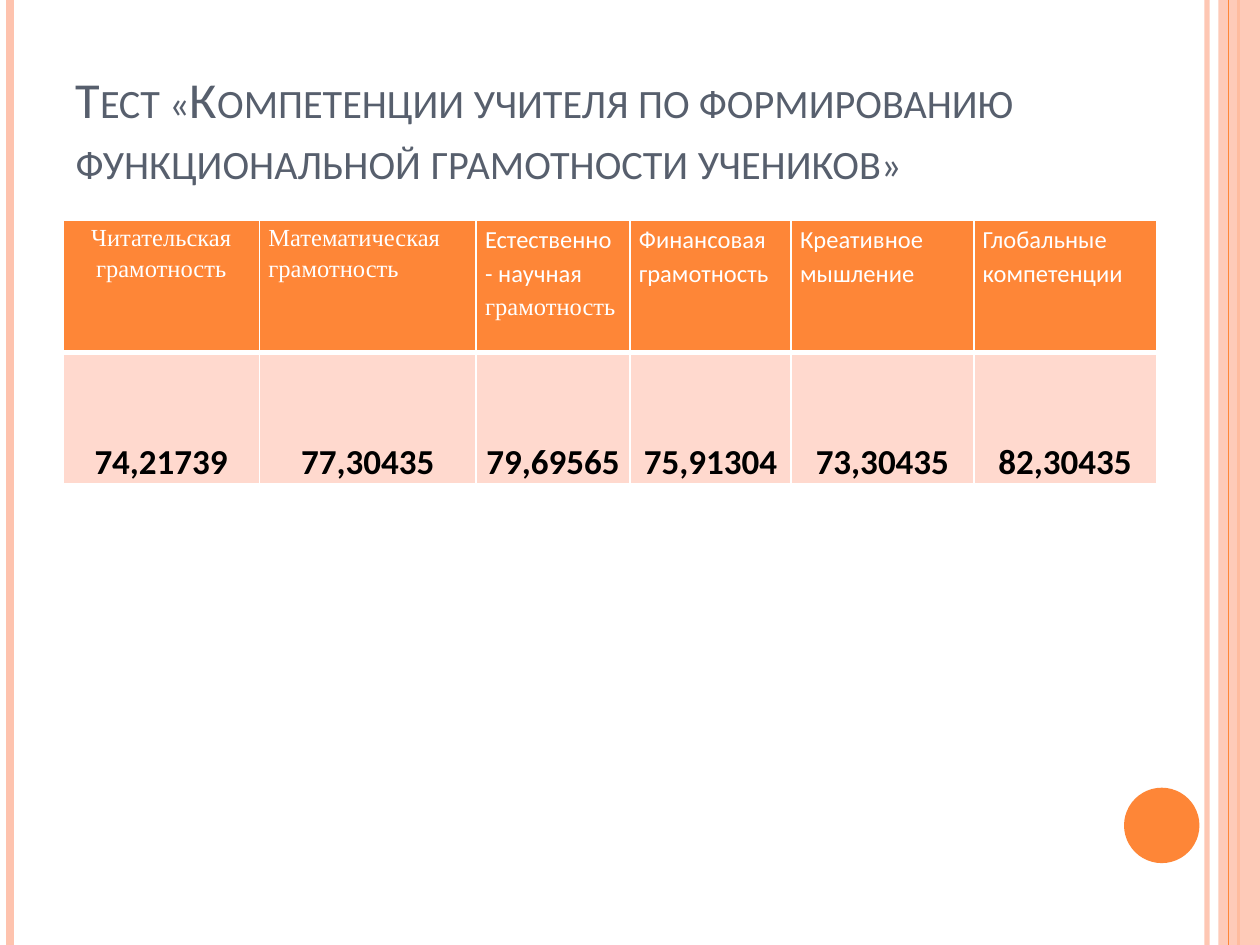
from dataclasses import dataclass

from lxml.etree import SubElement
from pptx import Presentation
from pptx.dml.color import RGBColor
from pptx.enum.shapes import MSO_CONNECTOR, MSO_SHAPE
from pptx.enum.text import MSO_ANCHOR, MSO_AUTO_SIZE, PP_ALIGN
from pptx.oxml.ns import qn
from pptx.util import Cm, Pt


@dataclass(frozen=True)
class Theme:
    """Colours, fonts and type sizes of the deck."""

    orange: str = "FE8637"
    peach: str = "FEC3AE"
    pale: str = "FFD9CE"
    slate: str = "575F6D"
    white: str = "FFFFFF"
    black: str = "000000"
    sans: str = "Calibri"
    serif: str = "Times New Roman"
    title_size: float = 28.8
    header_size: int = 14
    value_size: int = 20


class SlideBuilder:
    """Adds styled elements to the current slide."""

    def __init__(self, deck, theme):
        self.theme = theme
        self.height = deck.slide_height
        self.page = deck.slides.add_slide(deck.slide_layouts[5])

    def set_alpha(self, element, percent):
        """Make the solid colour inside an element partly transparent."""
        colour = next(element.iter(qn("a:srgbClr")))
        SubElement(colour, qn("a:alpha"), val=str(percent * 1000))

    def format_span(self, span, font, size, colour, bold=False):
        """Apply typeface, size, colour and weight to a run."""
        span.font.name = font
        span.font.size = Pt(size)
        span.font.bold = bold
        span.font.color.rgb = RGBColor.from_string(colour)

    def add_rule(self, x, colour, width, alpha=100):
        """Draw a vertical line over the full slide height."""
        rule = self.page.shapes.add_connector(
            MSO_CONNECTOR.STRAIGHT, Cm(x), 0, Cm(x), self.height)
        rule.line.color.rgb = RGBColor.from_string(colour)
        rule.line.width = Pt(width)
        properties = rule._element.spPr
        if alpha < 100:
            self.set_alpha(properties, alpha)
        SubElement(properties, qn("a:effectLst"))

    def add_block(self, kind, left, top, width, height, colour, alpha=100):
        """Draw a filled shape without an outline."""
        block = self.page.shapes.add_shape(
            kind, Cm(left), Cm(top), Cm(width), Cm(height))
        block.shadow.inherit = False
        block.fill.solid()
        block.fill.fore_color.rgb = RGBColor.from_string(colour)
        block.line.fill.background()
        if alpha < 100:
            self.set_alpha(block._element.spPr, alpha)

    def add_title(self, text, left, top, width, height):
        """Place the title in small capitals."""
        box = self.page.shapes.title
        box.left, box.top = Cm(left), Cm(top)
        box.width, box.height = Cm(width), Cm(height)
        frame = box.text_frame
        frame.text = text
        frame.word_wrap = True
        frame.auto_size = MSO_AUTO_SIZE.NONE
        frame.vertical_anchor = MSO_ANCHOR.BOTTOM
        para = frame.paragraphs[0]
        para.alignment = PP_ALIGN.LEFT
        span = para.runs[0]
        self.format_span(span, self.theme.sans, self.theme.title_size, self.theme.slate)
        span._r.get_or_add_rPr().set("cap", "small")

    def format_cell(self, cell, colour, anchor, top_line, bottom_line):
        """Set margins, borders and fill of a table cell."""
        cell.margin_left = cell.margin_right = Cm(0.18)
        cell.margin_top = cell.margin_bottom = 0
        cell.vertical_anchor = anchor
        properties = cell._tc.get_or_add_tcPr()
        widths = {"a:lnL": 1, "a:lnR": 1, "a:lnT": top_line, "a:lnB": bottom_line}
        for side, width in widths.items():
            border = SubElement(properties, qn(side), w=str(Pt(width)))
            fill = SubElement(border, qn("a:solidFill"))
            SubElement(fill, qn("a:srgbClr"), val=self.theme.white)
        cell.fill.solid()
        cell.fill.fore_color.rgb = RGBColor.from_string(colour)

    def add_header(self, cell, parts, alignment):
        """Fill a heading cell from pairs of text and font."""
        theme = self.theme
        self.format_cell(cell, theme.orange, MSO_ANCHOR.TOP, 1, 3)
        para = cell.text_frame.paragraphs[0]
        para.alignment = alignment
        para.line_spacing = 1.15
        for text, font in parts:
            span = para.add_run()
            span.text = text
            self.format_span(span, font, theme.header_size, theme.white)

    def add_value(self, cell, value):
        """Fill a result cell."""
        theme = self.theme
        self.format_cell(cell, theme.pale, MSO_ANCHOR.BOTTOM, 3, 1)
        cell.text_frame.text = value
        para = cell.text_frame.paragraphs[0]
        para.alignment = PP_ALIGN.CENTER
        para.line_spacing = 1.15
        para.space_after = Pt(10)
        self.format_span(para.runs[0], theme.sans, theme.value_size, theme.black, True)

    def add_results(self, left, top, row_height, columns):
        """Add a table with one heading and one value per column."""
        total = sum(width for width, *_ in columns)
        table = self.page.shapes.add_table(
            2, len(columns), Cm(left), Cm(top), Cm(total), Cm(2 * row_height)).table
        for index, (width, alignment, parts, value) in enumerate(columns):
            table.columns[index].width = Cm(width)
            self.add_header(table.cell(0, index), parts, alignment)
            self.add_value(table.cell(1, index), value)


def main():
    """Build and save the deck."""
    theme = Theme()
    deck = Presentation()
    deck.slide_width, deck.slide_height = Cm(25.4), Cm(19.05)
    slide = SlideBuilder(deck, theme)

    slide.add_rule(24.33, theme.peach, 3, 93)
    slide.add_rule(0.2, theme.peach, 4.5)
    slide.add_rule(24.97, theme.orange, 1.5)
    slide.add_block(MSO_SHAPE.RECTANGLE, 24.56, 0, 0.84, 19.05, theme.peach, 87)
    slide.add_rule(24.77, theme.orange, 0.75)
    slide.add_block(MSO_SHAPE.OVAL, 22.66, 15.88, 1.52, 1.52, theme.orange)

    slide.add_title(
        "Тест «Компетенции учителя по формированию функциональной грамотности учеников»",
        1.27, 0.76, 20.75, 3.18)

    left, center = PP_ALIGN.LEFT, PP_ALIGN.CENTER
    sans, serif = theme.sans, theme.serif
    slide.add_results(1.27, 4.45, 2.65, [
        (3.96, center, [("Читательская грамотность", serif)], "74,21739"),
        (4.37, left, [("Математическая грамотность", serif)], "77,30435"),
        (3.1, left, [("Естественно - научная ", sans), ("грамотность", serif)], "79,69565"),
        (3.25, left, [("Финансовая грамотность", sans)], "75,91304"),
        (3.68, left, [("Креативное мышление", sans)], "73,30435"),
        (3.68, left, [("Глобальные компетенции", sans)], "82,30435"),
    ])
    deck.save("out.pptx")


if __name__ == "__main__":
    main()
